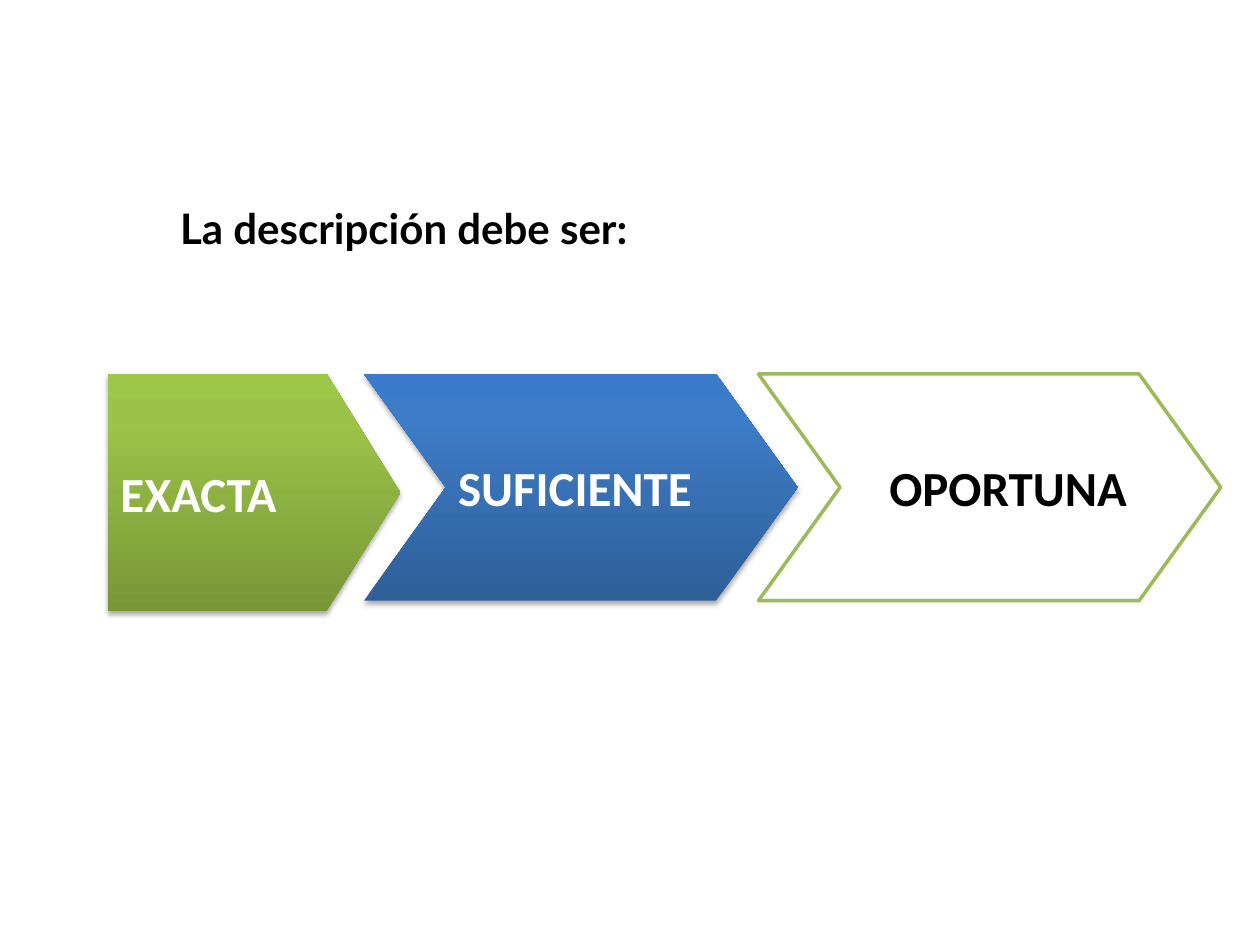
from copy import deepcopy

from lxml.etree import SubElement
from pptx import Presentation
from pptx.dml.color import RGBColor
from pptx.enum.shapes import MSO_SHAPE as Shape
from pptx.enum.text import MSO_ANCHOR as Anchor, PP_ALIGN as Align
from pptx.oxml.ns import qn
from pptx.util import Cm, Pt

GREEN_STOPS = ((0, "779737"), (0.8, "9BC348"), (1, "9DC746"))
BLUE_STOPS = ((0, "2F5F99"), (0.8, "3D7CC7"), (1, "3A7CCB"))


def color(value):
    """Return the colour for a hex string."""
    return RGBColor.from_string(value)


def write_text(shape, text, font, size, text_color, align=Align.LEFT):
    """Write one bold, vertically centred paragraph into a shape."""
    frame = shape.text_frame
    frame.word_wrap = True
    frame.vertical_anchor = Anchor.MIDDLE
    frame.text = text
    paragraph = frame.paragraphs[0]
    paragraph.alignment = align
    run_font = paragraph.runs[0].font
    run_font.name, run_font.size, run_font.bold = font, Pt(size), True
    run_font.color.rgb = color(text_color)


def fill_gradient(shape, stops):
    """Fill a shape with a gradient running from bottom to top."""
    shape.fill.gradient()
    shape.fill.gradient_angle = 90
    stop_list = shape._element.spPr.find(".//" + qn("a:gsLst"))
    for _ in stops[2:]:
        stop_list.append(deepcopy(stop_list[-1]))
    for stop, (position, value) in zip(shape.fill.gradient_stops, stops):
        stop.position = position
        stop.color.rgb = color(value)


def add_shadow(shape):
    """Give a shape a soft black shadow below it."""
    effects = shape._element.spPr.find(qn("a:effectLst"))
    shadow = SubElement(effects, qn("a:outerShdw"), blurRad=str(Pt(3.1)),
                        dist=str(Pt(1.8)), dir="5400000", rotWithShape="0")
    black = SubElement(shadow, qn("a:srgbClr"), val="000000")
    SubElement(black, qn("a:alpha"), val="35000")


def add_title(slide, left, top, width, height):
    """Add the heading in the given box."""
    title = slide.shapes.add_textbox(Cm(left), Cm(top), Cm(width), Cm(height))
    write_text(title, "La descripción debe ser:", "Lato", 24, "000000")


def add_step(slide, box, kind, point, text, stops=None, align=Align.LEFT):
    """Add one arrow step, shaded if it has gradient stops, else outlined."""
    shape = slide.shapes.add_shape(kind, *map(Cm, box))
    shape.adjustments[0] = point
    shape.shadow.inherit = False
    if stops:
        fill_gradient(shape, stops)
        shape.line.fill.background()
        add_shadow(shape)
    else:
        shape.fill.solid()
        shape.fill.fore_color.rgb = color("FFFFFF")
        shape.line.color.rgb = color("9BBB59")
        shape.line.width = Pt(2)
    write_text(shape, text, "Calibri", 28, "FFFFFF" if stops else "000000", align)


def add_steps(slide, left, top):
    """Add the row of three arrow steps from the given corner."""
    add_step(slide, (left, top, 5.89, 4.78), Shape.PENTAGON, 0.31,
             "EXACTA", GREEN_STOPS)
    add_step(slide, (left + 5.16, top, 8.74, 4.57), Shape.CHEVRON, 0.36,
             "SUFICIENTE", BLUE_STOPS)
    add_step(slide, (left + 13.11, top, 9.32, 4.57), Shape.CHEVRON, 0.36,
             "OPORTUNA", align=Align.RIGHT)


def main():
    """Build and save the presentation."""
    presentation = Presentation()
    presentation.slide_width, presentation.slide_height = Cm(25.4), Cm(19.05)
    slide = presentation.slides.add_slide(presentation.slide_layouts[6])
    add_title(slide, 3.38, 2.77, 17.63, 3.66)
    add_steps(slide, 2.18, 7.54)
    presentation.save("out.pptx")


if __name__ == "__main__":
    main()
